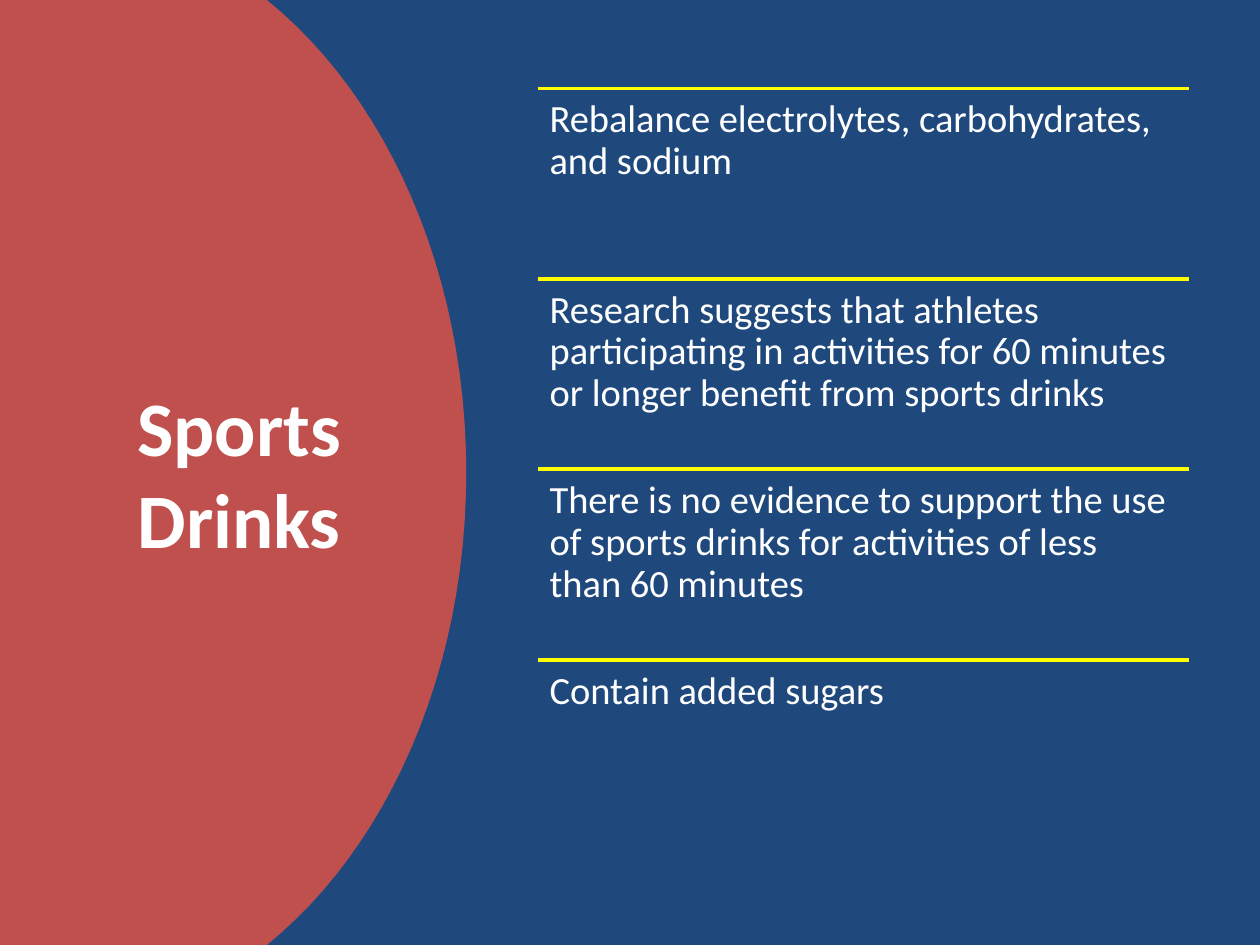
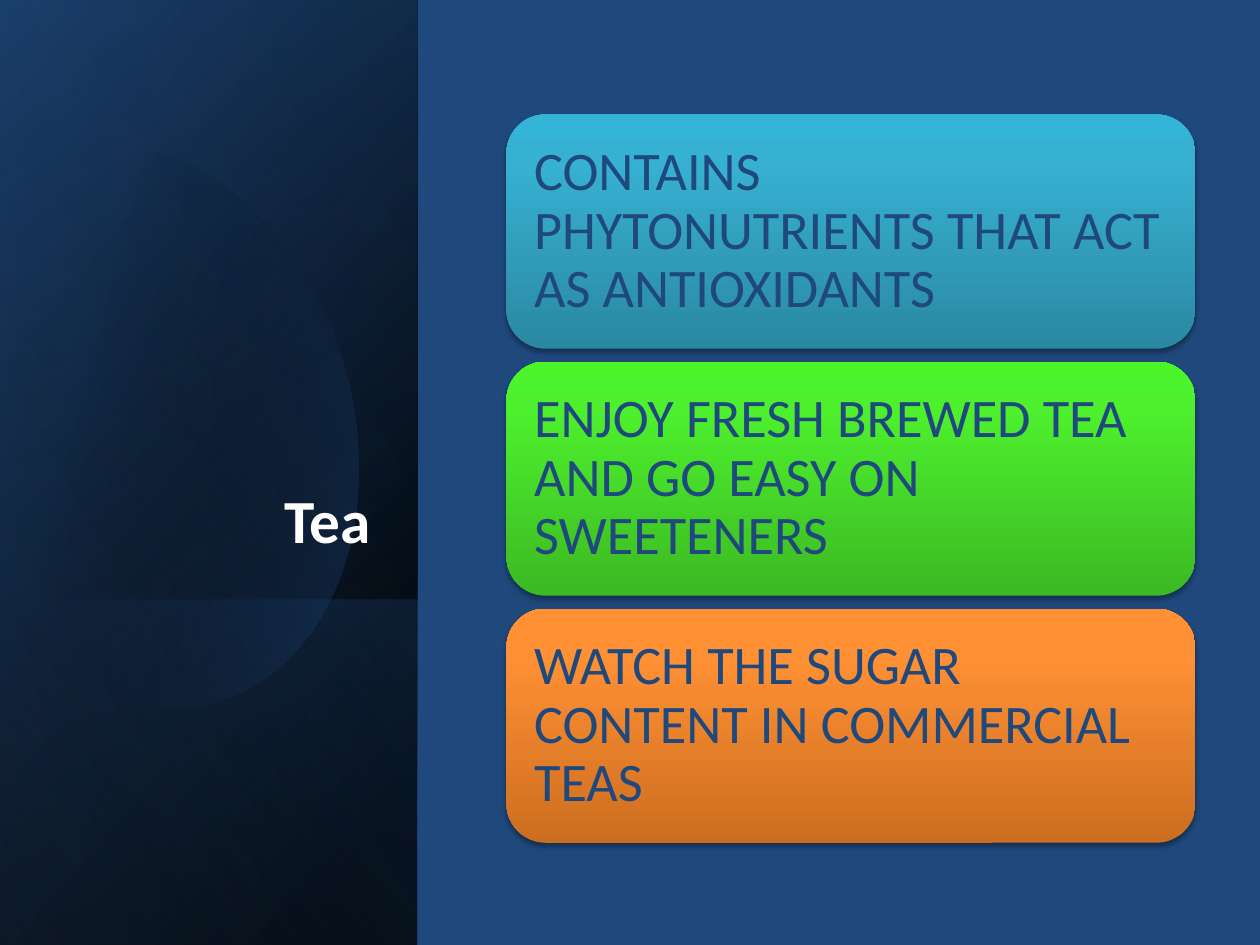
from dataclasses import dataclass

from pptx import Presentation
from pptx.dml.color import RGBColor
from pptx.enum.shapes import MSO_CONNECTOR, MSO_SHAPE
from pptx.enum.text import MSO_ANCHOR, PP_ALIGN
from pptx.oxml import parse_xml
from pptx.oxml.ns import nsdecls, qn
from pptx.util import Cm, Pt

RECTANGLE, ROUNDED = MSO_SHAPE.RECTANGLE, MSO_SHAPE.ROUNDED_RECTANGLE
STRAIGHT = MSO_CONNECTOR.STRAIGHT
TOP, MIDDLE, BOTTOM = MSO_ANCHOR.TOP, MSO_ANCHOR.MIDDLE, MSO_ANCHOR.BOTTOM
LEFT, CENTER, RIGHT = PP_ALIGN.LEFT, PP_ALIGN.CENTER, PP_ALIGN.RIGHT


@dataclass(frozen=True)
class Theme:
    font: str = "Calibri"
    navy: str = "1F497D"
    deep_navy: str = "17375E"
    sky: str = "558ED5"
    red: str = "C0504D"
    yellow: str = "FFFF00"
    white: str = "FFFFFF"
    black: str = "000000"
    sports_title_size: int = 44
    tea_title_size: int = 35
    fact_size: int = 22
    card_size: int = 31
    rule_weight: int = 2


THEME = Theme()
PAGE_WIDTH, PAGE_HEIGHT = 25.4, 19.05
PANEL_WIDTH = 8.41

SPORTS_FACTS = [
    "Rebalance electrolytes, carbohydrates, and sodium",
    "Research suggests that athletes participating in activities "
    "for 60 minutes or longer benefit from sports drinks",
    "There is no evidence to support the use of sports drinks "
    "for activities of less than 60 minutes",
    "Contain added sugars",
]

# Each card: text and its gradient from bottom to top
TEA_CARDS = [
    ("CONTAINS PHYTONUTRIENTS THAT ACT AS ANTIOXIDANTS",
     ("2A88A2", "37B1D2", "34B4D6")),
    ("ENJOY FRESH BREWED TEA AND GO EASY ON SWEETENERS",
     ("3CB923", "4EF02E", "4CF52A")),
    ("WATCH THE SUGAR CONTENT IN COMMERCIAL TEAS",
     ("CC6E20", "FF9034", "FF9136")),
]

# Curved outlines: a start, then lines (one point) or curves (three points)
RED_DOME = [
    [(0, 0)],
    [(5.38, 0)],
    [(7.8, 1.96), (9.4, 5.49), (9.4, 9.53)],
    [(9.4, 13.56), (7.8, 17.09), (5.38, 19.05)],
    [(0, 19.05)],
]
TEA_GLOW = [
    [(2.44, 2.9)],
    [(4.34, 3.1), (6.2, 4.88), (6.93, 7.37)],
    [(7.8, 10.46), (6.65, 13.49), (4.34, 14.15)],
    [(2.9, 14.58), (1.35, 13.97), (0.18, 12.7)],
    [(0, 12.5)],
    [(0, 3.56)],
    [(0.3, 3.3), (0.7, 3.12), (1.14, 3)],
    [(1.6, 2.87), (2, 2.84), (2.44, 2.9)],
]


# Fills and effects
def set_gradient(shape, stops, angle):
    """Fill with stops of (position %, colour, opacity %)."""
    stop_xml = "".join(
        f'<a:gs pos="{position * 1000}"><a:srgbClr val="{colour}">'
        f'<a:alpha val="{opacity * 1000}"/></a:srgbClr></a:gs>'
        for position, colour, opacity in stops)
    gradient = parse_xml(
        f'<a:gradFill {nsdecls("a")} rotWithShape="1"><a:gsLst>{stop_xml}</a:gsLst>'
        f'<a:lin ang="{angle * 60000}" scaled="0"/></a:gradFill>')
    shape.fill.background()
    properties = shape._element.spPr
    properties.replace(properties.find(qn("a:noFill")), gradient)


def add_drop_shadow(shape):
    effects = shape._element.spPr.find(qn("a:effectLst"))
    effects.append(parse_xml(
        f'<a:outerShdw {nsdecls("a")} blurRad="{Pt(3.1)}" dist="{Pt(1.8)}" '
        f'dir="5400000" rotWithShape="0"><a:srgbClr val="{THEME.black}">'
        '<a:alpha val="35000"/></a:srgbClr></a:outerShdw>'))


def make_plain(shape):
    shape.shadow.inherit = False
    shape.line.fill.background()


# Text
def write_text(shape, text, size, colour, align=LEFT, anchor=TOP,
               inset=None, spacing=None, bold=False):
    frame = shape.text_frame
    frame.word_wrap = True
    frame.vertical_anchor = anchor
    if inset is not None:
        frame.margin_left = frame.margin_right = Cm(inset)
        frame.margin_top = frame.margin_bottom = Cm(inset)
    para = frame.paragraphs[0]
    para.text = text
    para.alignment = align
    para.line_spacing = spacing
    para.font.name = THEME.font
    para.font.size = Pt(size)
    para.font.bold = bold
    para.font.color.rgb = RGBColor.from_string(colour)


def add_text(page, left, top, width, height, text, size, **style):
    box = page.shapes.add_textbox(Cm(left), Cm(top), Cm(width), Cm(height))
    write_text(box, text, size, THEME.white, **style)


# Shapes
def curve_points(start, first, second, end, steps=24):
    for step in range(1, steps + 1):
        t = step / steps
        u = 1 - t
        yield tuple(u**3 * a + 3 * u * u * t * b + 3 * u * t * t * c + t**3 * d
                    for a, b, c, d in zip(start, first, second, end))


def add_outline(page, segments):
    points = list(segments[0])
    for segment in segments[1:]:
        points += segment if len(segment) == 1 else curve_points(points[-1], *segment)
    vertices = [(Cm(x), Cm(y)) for x, y in points]
    builder = page.shapes.build_freeform(*vertices[0])
    builder.add_line_segments(vertices[1:])
    outline = builder.convert_to_shape()
    make_plain(outline)
    return outline


def add_side_panel(page, top, stops, angle):
    """Cover the left side from top to page end with a turned, mirrored rectangle."""
    length = PAGE_HEIGHT - top
    shift = (length - PANEL_WIDTH) / 2
    panel = page.shapes.add_shape(
        RECTANGLE, Cm(-shift), Cm(top + shift), Cm(length), Cm(PANEL_WIDTH))
    panel.rotation = 90
    panel._element.spPr.find(qn("a:xfrm")).set("flipH", "1")
    make_plain(panel)
    set_gradient(panel, stops, angle)


def add_rule(page, left, top, width):
    rule = page.shapes.add_connector(
        STRAIGHT, Cm(left), Cm(top), Cm(left + width), Cm(top))
    rule.line.color.rgb = RGBColor.from_string(THEME.yellow)
    rule.line.width = Pt(THEME.rule_weight)
    rule._element.spPr.append(parse_xml(f'<a:effectLst {nsdecls("a")}/>'))


def add_card(page, left, top, width, height, text, colours):
    card = page.shapes.add_shape(ROUNDED, Cm(left), Cm(top), Cm(width), Cm(height))
    make_plain(card)
    add_drop_shadow(card)
    stops = [(position, colour, 100) for position, colour in zip((0, 80, 100), colours)]
    set_gradient(card, stops, 270)
    write_text(card, text, THEME.card_size, THEME.navy,
               anchor=MIDDLE, inset=0.33, spacing=0.9)


# Slides
def add_page(deck):
    page = deck.slides.add_slide(deck.slide_layouts[6])
    page.background.fill.solid()
    page.background.fill.fore_color.rgb = RGBColor.from_string(THEME.navy)
    return page


def build_sports_drinks(deck):
    page = add_page(deck)
    dome = add_outline(page, RED_DOME)
    dome.fill.solid()
    dome.fill.fore_color.rgb = RGBColor.from_string(THEME.red)
    add_text(page, 1.75, 1.78, 6.15, 15.47, "Sports Drinks",
             THEME.sports_title_size, align=CENTER, anchor=MIDDLE, bold=True)

    left, first_top, width, row_height = 10.85, 1.78, 13.11, 3.84
    for row, fact in enumerate(SPORTS_FACTS):
        top = first_top + row * row_height
        add_rule(page, left, top, width)
        add_text(page, left, top, width, row_height, fact,
                 THEME.fact_size, inset=0.23, spacing=0.9)


def build_tea(deck):
    page = add_page(deck)
    black, navy = THEME.black, THEME.navy

    # Layered dark panel
    add_side_panel(page, 0, [(8, black, 100), (100, THEME.deep_navy, 100)], 50)
    add_side_panel(page, 0, [(0, black, 0), (99, navy, 46)], 30)
    add_side_panel(page, 12.09, [(2, navy, 29), (100, black, 30)], 130)
    glow = add_outline(page, TEA_GLOW)
    set_gradient(glow, [(29, black, 0), (100, navy, 43)], 14)
    add_side_panel(page, 0, [(0, black, 0), (99, THEME.sky, 11)], 120)
    add_text(page, 1.22, 4.67, 6.5, 6.65, "Tea",
             THEME.tea_title_size, align=RIGHT, anchor=BOTTOM, bold=True)

    # Cards
    first_top, height, gap = 2.31, 4.72, 0.26
    for row, (text, colours) in enumerate(TEA_CARDS):
        add_card(page, 10.21, first_top + row * (height + gap), 13.89, height,
                 text, colours)


def main():
    deck = Presentation()
    deck.slide_width, deck.slide_height = Cm(PAGE_WIDTH), Cm(PAGE_HEIGHT)
    build_sports_drinks(deck)
    build_tea(deck)
    deck.save("out.pptx")


if __name__ == "__main__":
    main()
